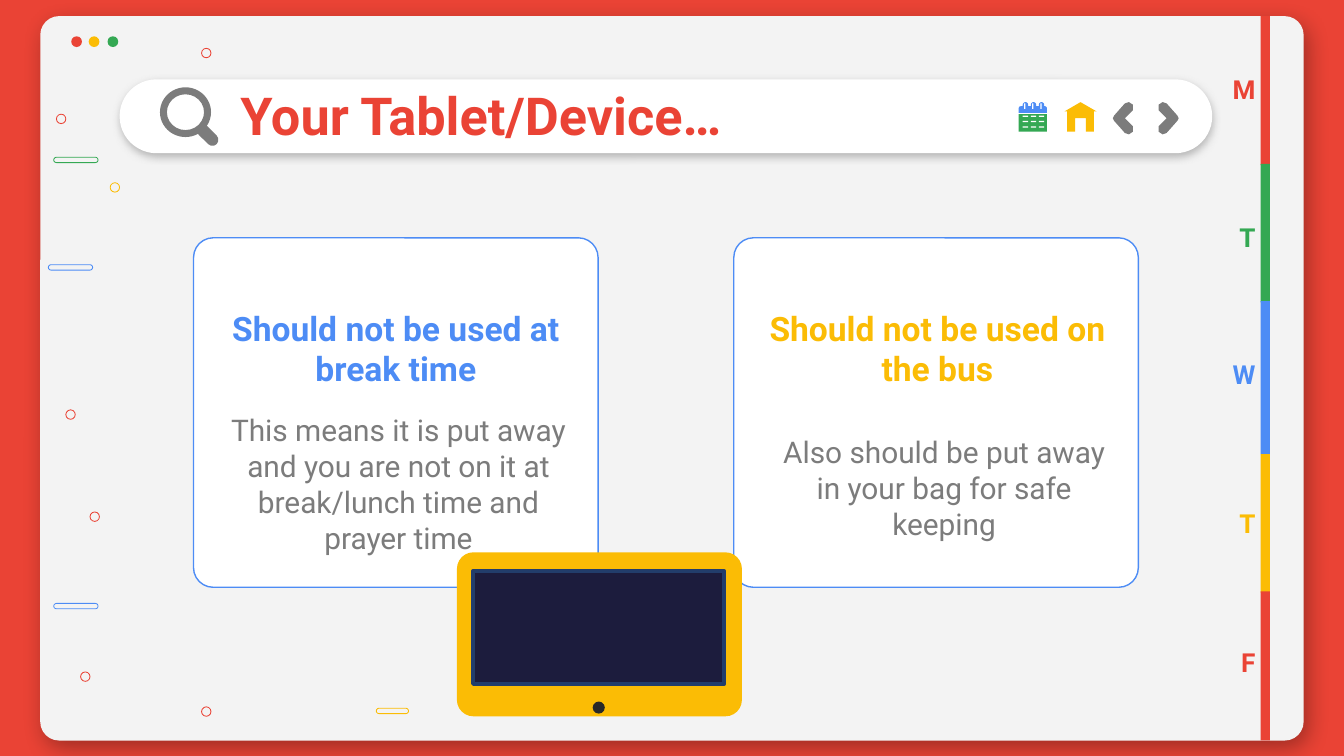
from lxml import etree
from pptx import Presentation
from pptx.dml.color import RGBColor
from pptx.enum.shapes import MSO_SHAPE
from pptx.enum.text import MSO_ANCHOR, PP_ALIGN
from pptx.oxml.ns import qn
from pptx.util import Inches, Pt

OVAL = MSO_SHAPE.OVAL
RECTANGLE = MSO_SHAPE.RECTANGLE
ROUNDED = MSO_SHAPE.ROUNDED_RECTANGLE
TOP_ROUNDED = MSO_SHAPE.ROUND_2_SAME_RECTANGLE
DONUT = MSO_SHAPE.DONUT
LEFT, CENTER, RIGHT = PP_ALIGN.LEFT, PP_ALIGN.CENTER, PP_ALIGN.RIGHT
MIDDLE = MSO_ANCHOR.MIDDLE

RED, YELLOW, GREEN, BLUE = "EA4335", "FBBC05", "34A853", "4D8CF5"
WHITE, GRAY = "FFFFFF", "7C7C7C"

presentation = Presentation()
presentation.slide_width = Inches(10)
presentation.slide_height = Inches(10 * 9 / 16)
slide = presentation.slides.add_slide(presentation.slide_layouts[6])
slide.background.fill.solid()
slide.background.fill.fore_color.rgb = RGBColor.from_string(RED)


def draw(outline, place, fill=None, line=None, width=0.44, round_by=None):
    if isinstance(outline, list):
        points = [(Inches(place[0] + x), Inches(place[1] + y)) for x, y in outline]
        builder = slide.shapes.build_freeform(*points[0])
        builder.add_line_segments(points[1:], close=True)
        shape = builder.convert_to_shape()
    else:
        shape = slide.shapes.add_shape(outline, *map(Inches, place))
    shape.shadow.inherit = False
    if round_by is not None:
        shape.adjustments[0] = round_by
    if fill:
        shape.fill.solid()
        shape.fill.fore_color.rgb = RGBColor.from_string(fill)
    else:
        shape.fill.background()
    if line:
        shape.line.color.rgb = RGBColor.from_string(line)
        shape.line.width = Pt(width)
    else:
        shape.line.fill.background()
    return shape


def cast_shadow(shape, color, alpha, blur, distance, angle):
    effects = shape._element.spPr.find(qn("a:effectLst"))
    shadow = etree.SubElement(effects, qn("a:outerShdw"), blurRad=str(Pt(blur)),
                              dist=str(Pt(distance)), dir=str(angle * 60000),
                              algn="bl", rotWithShape="0")
    tint = etree.SubElement(shadow, qn("a:srgbClr"), val=color)
    etree.SubElement(tint, qn("a:alpha"), val=str(alpha * 1000))


window = draw(ROUNDED, (0.3, 0.12, 9.4, 5.39), "F3F3F3", round_by=0.026)
cast_shadow(window, "000000", 32, 12.4, 5.2, 57)
for left, color in [(0.53, RED), (0.66, YELLOW), (0.8, GREEN)]:
    draw(OVAL, (left, 0.27, 0.08, 0.08), color)

rings = [
    (0.67, 3.81, RED), (0.82, 1.36, YELLOW), (0.42, 0.85, RED), (0.6, 5, RED),
    (0.49, 3.05, RED), (1.5, 0.36, RED), (1.5, 5.26, RED),
]
for left, top, color in rings:
    draw(OVAL, (left, top, 0.07, 0.07), line=color)

pills = [(2.8, 5.27, 0.24, YELLOW), (0.36, 1.97, 0.33, BLUE),
         (0.4, 4.49, 0.33, BLUE), (0.4, 1.17, 0.33, GREEN)]
for left, top, width, color in pills:
    draw(ROUNDED, (left, top, width, 0.04), line=color, round_by=0.5)

search_bar = draw(ROUNDED, (0.89, 0.59, 8.13, 0.55), WHITE, round_by=0.5)
cast_shadow(search_bar, GRAY, 50, 4.5, 1.5, 90)
draw(DONUT, (1.19, 0.65, 0.38, 0.37), GRAY, round_by=0.14)
handle = draw(ROUNDED, (1.45, 0.96, 0.19, 0.09), GRAY, round_by=0.5)
handle.rotation = 45

for left in (5.46, 1.44):
    draw(ROUNDED, (left, 1.77, 3.01, 2.6), WHITE, BLUE, 0.75, 0.056)

texts = [
    ("Should not be used at break time", (1.44, 2.38, 3.01, 0.42), CENTER, 18, BLUE, True),
    ("This means it is put away and you are not on it at break/lunch time and prayer time",
     (1.59, 3.02, 2.75, 1.16), CENTER, 16, GRAY, False),
    ("Should not be used on the bus", (5.47, 2.38, 3.01, 0.42), CENTER, 18, YELLOW, True),
    ("Also should be put away in your bag for safe keeping",
     (5.65, 3.05, 2.75, 1.16), CENTER, 16, GRAY, False),
]

tabs = [
    ("M", 0.12, 1.11, 0.51, RED),
    ("T", 1.22, 1.03, 1.61, GREEN),
    ("W", 2.24, 1.14, 2.63, BLUE),
    ("T", 3.38, 1.03, 3.74, YELLOW),
    ("F", 4.4, 1.11, 4.77, RED),
]
for day, top, height, label_top, color in tabs:
    draw(RECTANGLE, (9.38, top, 0.07, height), color)
    texts.append((day, (8.96, label_top, 0.48, 0.31), RIGHT, 14, color, True))
texts.append(("Your Tablet/Device…", (1.69, 0.59, 7.09, 0.52), LEFT, 28, RED, True))

draw(RECTANGLE, (7.58, 0.85, 0.21, 0.13), GREEN)
draw(TOP_ROUNDED, (7.58, 0.79, 0.21, 0.05), BLUE, round_by=0.3)
for column in range(3):
    left = 7.61 + 0.06 * column
    draw(ROUNDED, (left, 0.76, 0.04, 0.06), BLUE, round_by=0.5)
    draw(RECTANGLE, (left + 0.01, 0.77, 0.01, 0.04), WHITE)
    for row in range(3):
        draw(RECTANGLE, (left, 0.86 + 0.04 * row, 0.04, 0.01), WHITE)

house = [(0.12, 0), (0.24, 0.07), (0.22, 0.07), (0.22, 0.22), (0.16, 0.22), (0.16, 0.12),
         (0.08, 0.12), (0.08, 0.22), (0.02, 0.22), (0.02, 0.07), (0, 0.07)]
draw(house, (7.92, 0.76), YELLOW)
next_arrow = [(0.04, 0), (0.07, 0.01), (0.15, 0.1), (0.16, 0.12), (0.15, 0.14), (0.07, 0.23),
              (0.04, 0.24), (0.01, 0.22), (0.01, 0.18), (0.07, 0.12), (0.01, 0.06), (0.01, 0.02)]
back_arrow = [(0.16 - x, y) for x, y in next_arrow]
draw(next_arrow, (8.61, 0.76), GRAY)
draw(back_arrow, (8.28, 0.76), GRAY)

for words, place, alignment, size, color, bold in texts:
    frame = slide.shapes.add_textbox(*map(Inches, place)).text_frame
    frame_format = {"word_wrap": True, "vertical_anchor": MIDDLE}
    for side in ("left", "top", "right", "bottom"):
        frame_format["margin_" + side] = Inches(0.1)
    for name, value in frame_format.items():
        setattr(frame, name, value)
    paragraph = frame.paragraphs[0]
    paragraph.text = words
    paragraph.alignment = alignment
    font_format = {"name": "Roboto", "size": Pt(size), "bold": bold}
    for name, value in font_format.items():
        setattr(paragraph.font, name, value)
    paragraph.font.color.rgb = RGBColor.from_string(color)

draw(ROUNDED, (3.4, 4.11, 2.12, 1.22), YELLOW, round_by=0.1)
draw(OVAL, (4.41, 5.22, 0.09, 0.09), "282828")
draw(RECTANGLE, (3.52, 4.25, 1.87, 0.84), "1C1C3D", "223D6B", 2)

presentation.save("out.pptx")
